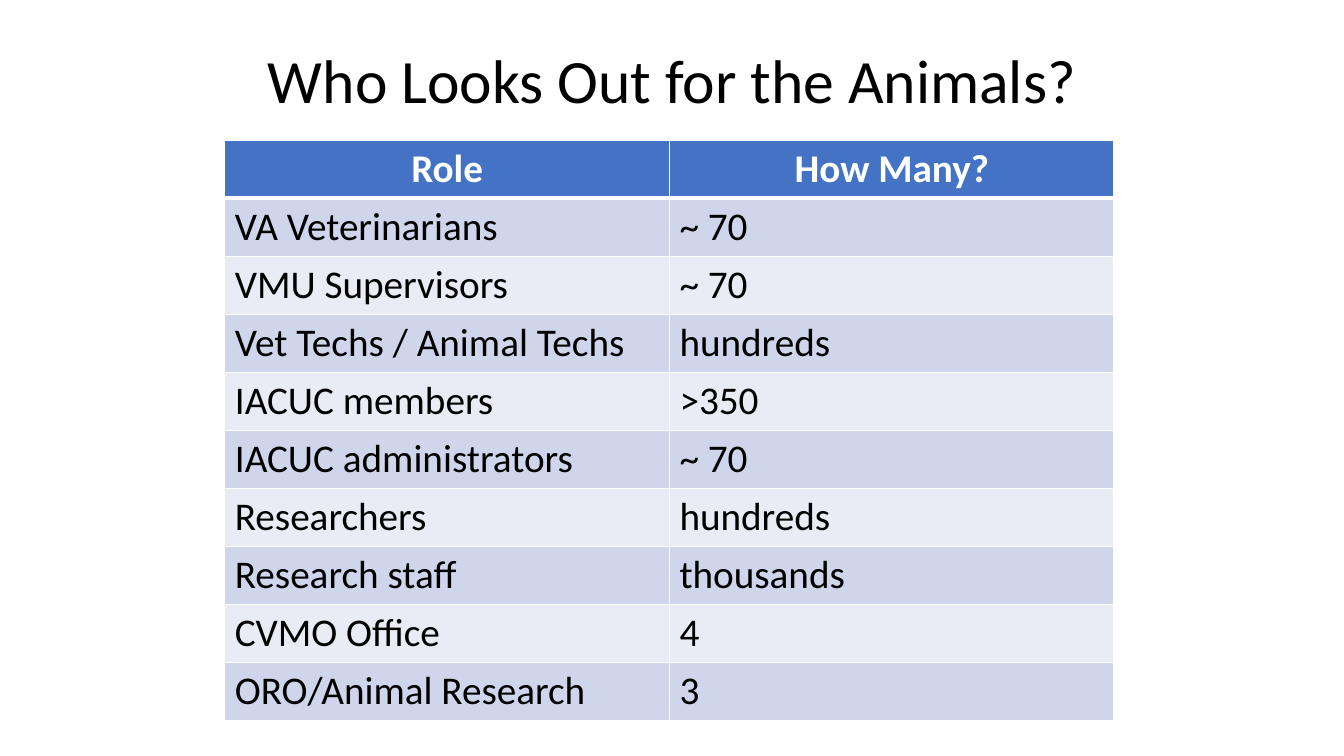
"""Build a slide with a table of the people who look out for the animals."""
from lxml import etree
from pptx import Presentation
from pptx.dml.color import RGBColor
from pptx.enum import text
from pptx.oxml import ns
from pptx.util import Inches, Pt

BLACK = RGBColor(0, 0, 0)
WHITE = RGBColor(255, 255, 255)
BLUE = RGBColor(0x44, 0x72, 0xC4)
BANDS = [RGBColor(0xE9, 0xEB, 0xF5), RGBColor(0xCF, 0xD5, 0xEA)]

ROLES = [
    ("Role", "How Many?"),
    ("VA Veterinarians", "~ 70"),
    ("VMU Supervisors", "~ 70"),
    ("Vet Techs / Animal Techs", "hundreds"),
    ("IACUC members", ">350"),
    ("IACUC administrators", "~ 70"),
    ("Researchers", "hundreds"),
    ("Research staff", "thousands"),
    ("CVMO Office", "4"),
    ("ORO/Animal Research", "3"),
]


def write(frame, words, size=28, color=BLACK, bold=False, align=text.PP_ALIGN.LEFT):
    para = frame.paragraphs[0]
    para.alignment = align
    run = para.add_run()
    run.text = words
    run.font.name = "Calibri"
    run.font.size = Pt(size)
    run.font.bold = bold
    run.font.color.rgb = color
    return para


def border(cell, side, width):
    line = etree.SubElement(cell._tc.get_or_add_tcPr(), ns.qn("a:" + side), w=str(Pt(width)))
    fill = etree.SubElement(line, ns.qn("a:solidFill"))
    etree.SubElement(fill, ns.qn("a:srgbClr"), val=str(WHITE))


deck = Presentation()
deck.slide_width = Inches(13.33)
deck.slide_height = Inches(7.5)
slide = deck.slides.add_slide(deck.slide_layouts[5])

title = slide.shapes.title
title.left, title.top = Inches(0.92), Inches(0.4)
title.width, title.height = Inches(11.5), Inches(0.86)
title.text_frame.vertical_anchor = text.MSO_ANCHOR.MIDDLE
head = write(title.text_frame, "Who Looks Out for the Animals?", size=44,
             align=text.PP_ALIGN.CENTER)
head.line_spacing = 0.9

table = slide.shapes.add_table(len(ROLES), 2, Inches(2.23), Inches(1.39),
                               Inches(8.82), Inches(5.7)).table
for row, pair in enumerate(ROLES):
    for col, words in enumerate(pair):
        cell = table.cell(row, col)
        border(cell, "lnL", 1)
        border(cell, "lnR", 1)
        border(cell, "lnT", 3 if row == 1 else 1)
        border(cell, "lnB", 3 if row == 0 else 1)
        cell.fill.solid()
        if row == 0:
            cell.fill.fore_color.rgb = BLUE
            write(cell.text_frame, words, color=WHITE, bold=True,
                  align=text.PP_ALIGN.CENTER)
        else:
            cell.fill.fore_color.rgb = BANDS[row % 2]
            write(cell.text_frame, words)

deck.save("out.pptx")
